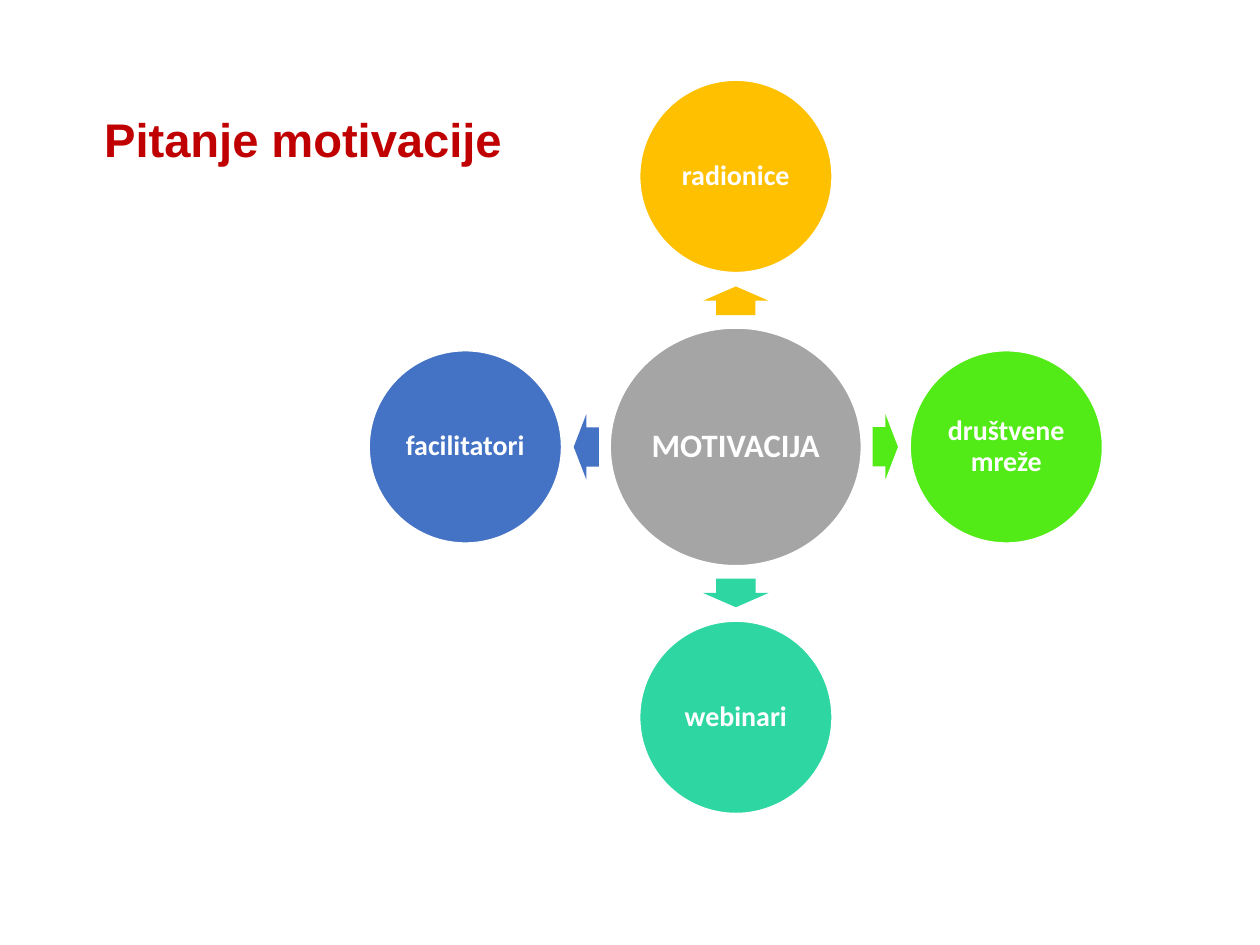
from pptx import Presentation
from pptx.dml.color import RGBColor
from pptx.enum.shapes import MSO_SHAPE
from pptx.enum.text import MSO_ANCHOR, MSO_AUTO_SIZE, PP_ALIGN
from pptx.util import Inches, Pt

WIDE = 7.5
HIGH = WIDE * 3 / 4
MID_X, MID_Y = 4.38, 2.66
REACH = 1.61
SPOKES = [
    ("radionice", "FFC000", 0, -1, 270),
    ("društvene mreže", "53EB17", 1, 0, 0),
    ("webinari", "2ED7A1", 0, 1, 90),
    ("facilitatori", "4472C4", -1, 0, 180),
]


def paint(color, tone):
    color.rgb = RGBColor.from_string(tone)


def apply(item, style):
    for name, value in style.items():
        setattr(item, name, value)


def write(shape, text, font, size, tone, align, inset):
    frame = shape.text_frame
    apply(frame, {
        "word_wrap": True,
        "auto_size": MSO_AUTO_SIZE.NONE,
        "vertical_anchor": MSO_ANCHOR.MIDDLE,
        "margin_left": Inches(inset),
        "margin_right": Inches(inset),
        "margin_top": Inches(inset / 2),
        "margin_bottom": Inches(inset / 2),
    })
    frame.text = text
    line = frame.paragraphs[0]
    apply(line, {"alignment": align, "line_spacing": 0.9})
    apply(line.font, {"name": font, "size": Pt(size), "bold": True})
    paint(line.font.color, tone)


def add_form(slide, kind, x, y, wide, high, tone):
    form = slide.shapes.add_shape(
        kind, Inches(x - wide / 2), Inches(y - high / 2), Inches(wide), Inches(high))
    form.shadow.inherit = False
    form.fill.solid()
    paint(form.fill.fore_color, tone)
    form.line.fill.background()
    return form


def add_disc(slide, text, x, y, wide, high, tone, size):
    disc = add_form(slide, MSO_SHAPE.OVAL, x, y, wide, high, tone)
    paint(disc.line.color, "FFFFFF")
    disc.line.width = Pt(1)
    write(disc, text, "Calibri", size, "FFFFFF", PP_ALIGN.CENTER, 0.02)


def add_arrow(slide, x, y, long, tone, turn):
    arrow = add_form(slide, MSO_SHAPE.RIGHT_ARROW, x, y, long, 0.39, tone)
    arrow.rotation = turn
    arrow.adjustments[0] = 0.6
    arrow.adjustments[1] = 0.5


def add_title(slide, text):
    title = slide.shapes.title
    apply(title, {
        "left": Inches(0.52), "top": Inches(0.3),
        "width": Inches(6.47), "height": Inches(1.09),
    })
    write(title, text, "Arial", 20.2, "C00000", PP_ALIGN.LEFT, 0.1)


def main():
    deck = Presentation()
    apply(deck, {"slide_width": Inches(WIDE), "slide_height": Inches(HIGH)})
    slide = deck.slides.add_slide(deck.slide_layouts[5])
    add_title(slide, "Pitanje motivacije")
    add_disc(slide, "MOTIVACIJA", MID_X, MID_Y, 1.5, 1.42, "A5A5A5", 14)
    for text, tone, dx, dy, turn in SPOKES:
        gap, long = (0.89, 0.15) if dx else (0.87, 0.17)
        add_arrow(slide, MID_X + dx * gap, MID_Y + dy * gap, long, tone, turn)
        add_disc(slide, text, MID_X + dx * REACH, MID_Y + dy * REACH,
                 1.15, 1.15, tone, 12)
    deck.save("out.pptx")


if __name__ == "__main__":
    main()
